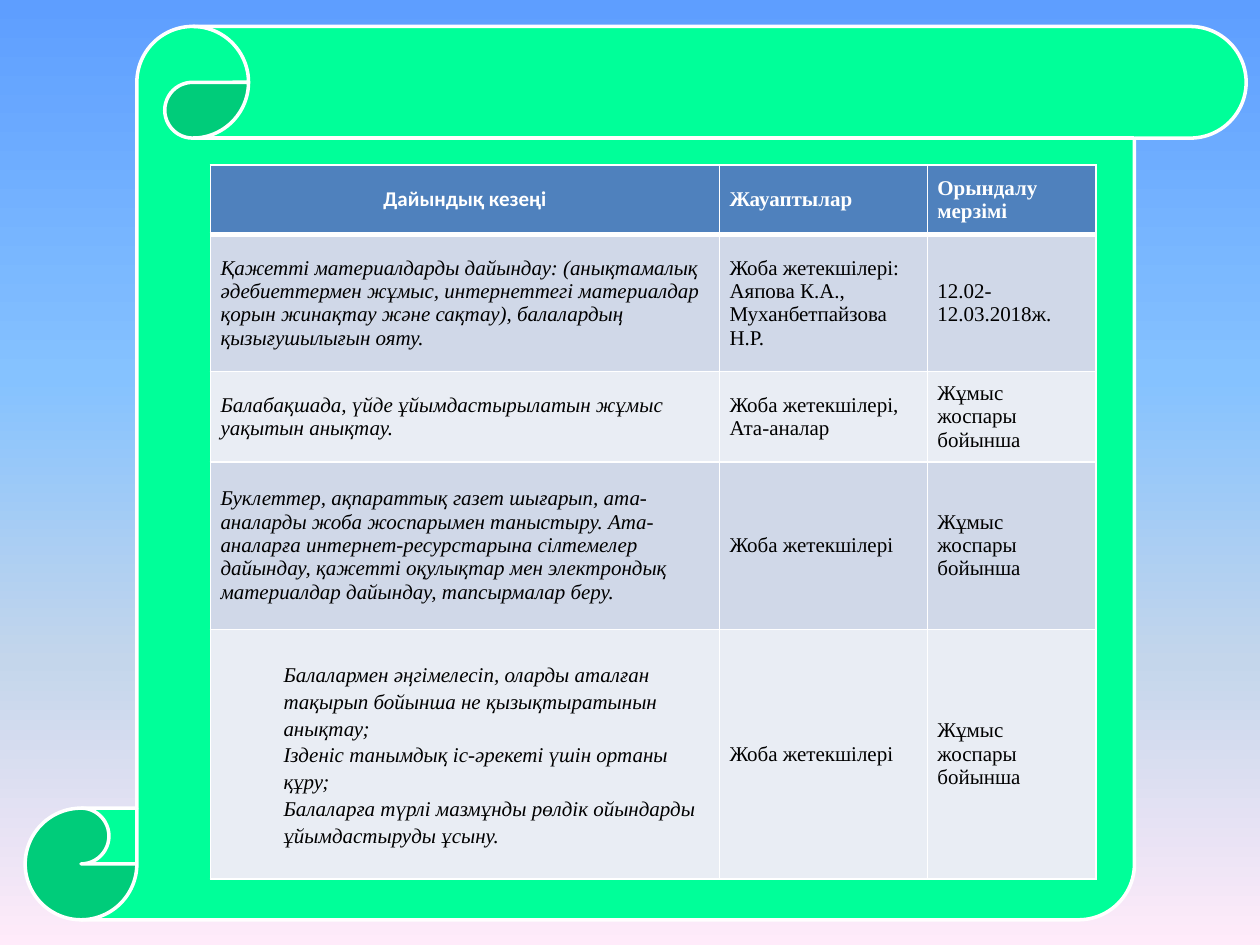
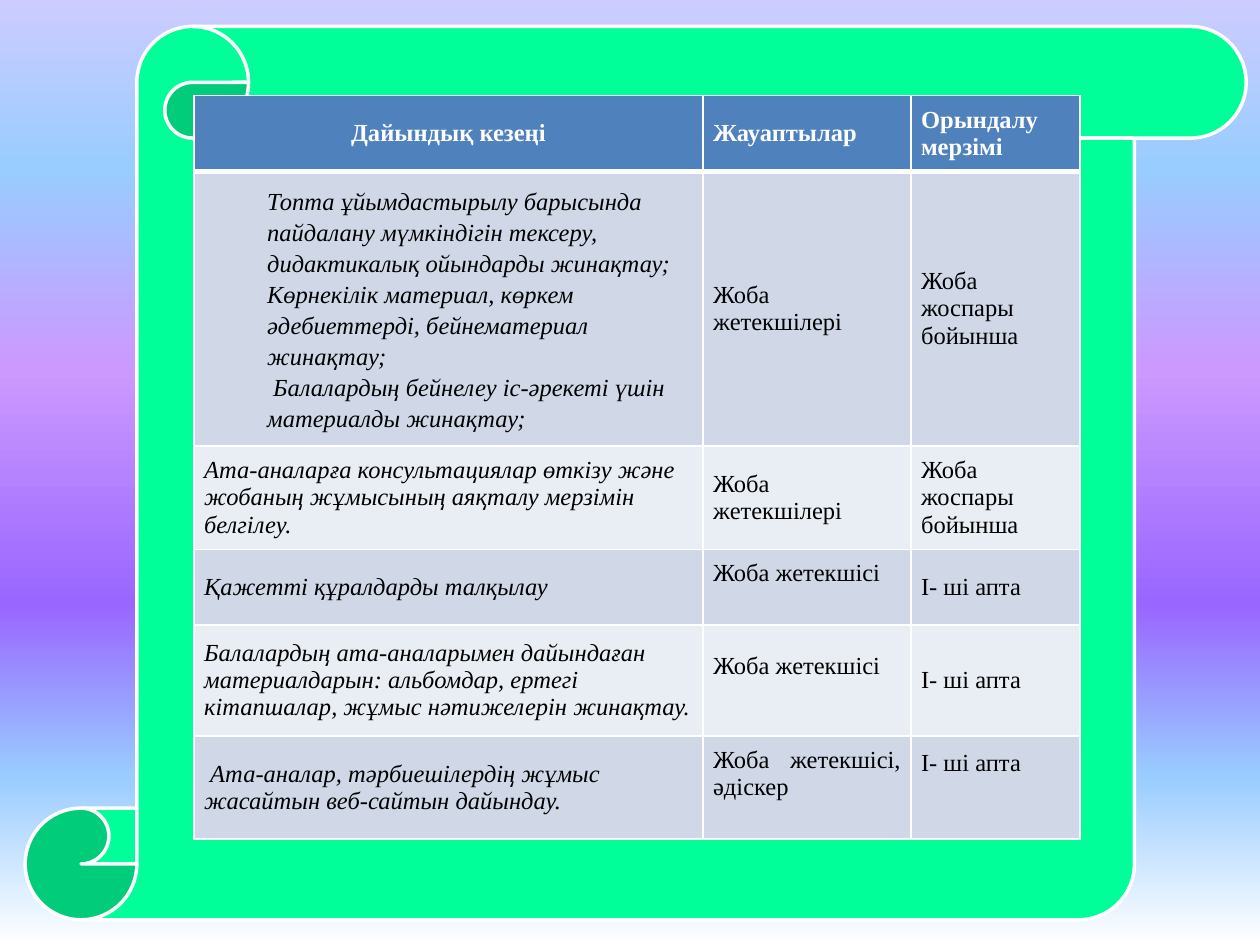
from copy import deepcopy
from lxml import etree
from pptx import Presentation
from pptx.dml.color import RGBColor
from pptx.enum.shapes import MSO_SHAPE
from pptx.enum.text import MSO_ANCHOR, PP_ALIGN
from pptx.oxml.ns import qn
from pptx.util import Inches, Pt

SCROLL = MSO_SHAPE.VERTICAL_SCROLL
MID, TOP = MSO_ANCHOR.MIDDLE, MSO_ANCHOR.TOP
LEFT, CENTER, JUST = PP_ALIGN.LEFT, PP_ALIGN.CENTER, PP_ALIGN.JUSTIFY

WHITE = RGBColor(0xFF, 0xFF, 0xFF)
BLACK = RGBColor(0, 0, 0)
GREEN = RGBColor(0x00, 0xFF, 0x99)
BLUE = RGBColor(0x4F, 0x81, 0xBD)
BANDS = [RGBColor(0xE9, 0xED, 0xF4), RGBColor(0xD0, 0xD8, 0xE8)]
SKY = [(0, RGBColor(0x5E, 0x9E, 0xFF)), (40, RGBColor(0x85, 0xC2, 0xFF)),
       (70, RGBColor(0xC4, 0xD6, 0xEB)), (100, RGBColor(0xFF, 0xEB, 0xFA))]
DUSK = [(0, WHITE), (18, RGBColor(0x99, 0xCC, 0xFF)),
        (36, RGBColor(0x99, 0x66, 0xFF)), (61, RGBColor(0xCC, 0x99, 0xFF)),
        (82, RGBColor(0x99, 0xCC, 0xFF)), (100, RGBColor(0xCC, 0xCC, 0xFF))]

SERIF, SANS = "Times New Roman", "Calibri"
COLS, ROWS = 100, 75
WIDTHS = [40.4, 16.5, 13.4]
HEAD = ["Дайындық кезеңі", "Жауаптылар", "Орындалу мерзімі"]
LEADS, LEAD = "Жоба жетекшілері", "Жоба жетекшісі"
WORK, PLAN = "Жұмыс жоспары бойынша", "Жоба жоспары бойынша"
WEEK = "І- ші апта"

FIRST = [
    HEAD,
    ["Қажетті материалдарды дайындау: (анықтамалық әдебиеттермен жұмыс, "
     "интернеттегі материалдар қорын жинақтау және сақтау), балалардың "
     "қызығушылығын ояту.",
     LEADS + ":\nАяпова К.А., Муханбетпайзова Н.Р.", "12.02-12.03.2018ж."],
    ["Балабақшада, үйде ұйымдастырылатын жұмыс уақытын анықтау.",
     LEADS + ",\nАта-аналар", WORK],
    ["Буклеттер, ақпараттық газет шығарып, ата-аналарды жоба жоспарымен "
     "таныстыру. Ата-аналарға интернет-ресурстарына сілтемелер дайындау, "
     "қажетті оқулықтар мен электрондық материалдар дайындау, "
     "тапсырмалар беру.", LEADS, WORK],
    ["Балалармен әңгімелесіп, оларды аталған тақырып бойынша не "
     "қызықтыратынын анықтау;\n"
     "Ізденіс танымдық іс-әрекеті үшін ортаны құру;\n"
     "Балаларға түрлі мазмұнды рөлдік ойындарды ұйымдастыруды ұсыну.",
     LEADS, WORK],
]
NEXT = [
    HEAD,
    ["Топта ұйымдастырылу барысында пайдалану мүмкіндігін тексеру, "
     "дидактикалық ойындарды жинақтау;\n"
     "Көрнекілік материал, көркем әдебиеттерді, бейнематериал жинақтау;\n"
     " Балалардың бейнелеу іс-әрекеті үшін материалды жинақтау;",
     LEADS, PLAN],
    ["Ата-аналарға консультациялар өткізу және жобаның жұмысының "
     "аяқталу мерзімін белгілеу.", LEADS, PLAN],
    ["Қажетті құралдарды талқылау", LEAD, WEEK],
    ["Балалардың ата-аналарымен дайындаған материалдарын: альбомдар, "
     "ертегі кітапшалар, жұмыс нәтижелерін жинақтау.", LEAD, WEEK],
    [" Ата-аналар, тәрбиешілердің жұмыс жасайтын веб-сайтын дайындау.",
     LEAD + ", әдіскер", WEEK],
]


class Deck:
    def __init__(self):
        self.file = Presentation()
        self.file.slide_width, self.file.slide_height = Inches(10), Inches(7.5)
        self.slide = None

    def x(self, cols):
        return round(self.file.slide_width * cols / COLS)

    def y(self, rows):
        return round(self.file.slide_height * rows / ROWS)

    def page(self, stops, angle):
        self.slide = self.file.slides.add_slide(self.file.slide_layouts[6])
        fill = self.slide.background.fill
        fill.gradient()
        fill.gradient_angle = angle
        group = self.slide.element.find(".//" + qn("a:gsLst"))
        model = deepcopy(group[0])
        for stop in list(group):
            group.remove(stop)
        for place, color in stops:
            stop = deepcopy(model)
            for child in list(stop):
                stop.remove(child)
            stop.set("pos", str(place * 1000))
            etree.SubElement(stop, qn("a:srgbClr"), val=str(color))
            group.append(stop)
        self.scroll()

    def scroll(self):
        shape = self.slide.shapes.add_shape(
            SCROLL, self.x(2), self.y(2.1), self.x(96.9), self.y(70.9))
        shape.shadow.inherit = False
        shape.fill.solid()
        shape.fill.fore_color.rgb = GREEN
        shape.line.color.rgb = WHITE
        shape.line.width = Pt(2)

    def table(self, left, top, highs, data, size, face=SERIF):
        grid = self.slide.shapes.add_table(
            len(data), len(WIDTHS), self.x(left), self.y(top),
            self.x(sum(WIDTHS)), self.y(sum(highs))).table
        for col, width in zip(grid.columns, WIDTHS):
            col.width = self.x(width)
        for row, high in zip(grid.rows, highs):
            row.height = self.y(high)
        for r, row in enumerate(data):
            for c, text in enumerate(row):
                cell = grid.cell(r, c)
                self.frame(cell, r)
                self.text(cell, text, r == 0, c == 0, size,
                          face if r == c == 0 else SERIF)
        return grid

    def frame(self, cell, row):
        cell.margin_left = cell.margin_right = self.x(0.8)
        cell.margin_top = cell.margin_bottom = self.y(0.8)
        cell.vertical_anchor = MID
        props = cell._tc.get_or_add_tcPr()
        thick = {0: "lnB", 1: "lnT"}.get(row)
        for side in ("lnL", "lnR", "lnT", "lnB"):
            wide = Pt(3 if side == thick else 1)
            line = etree.SubElement(props, qn("a:" + side), w=str(int(wide)))
            fill = etree.SubElement(line, qn("a:solidFill"))
            etree.SubElement(fill, qn("a:srgbClr"), val=str(WHITE))
        cell.fill.solid()
        cell.fill.fore_color.rgb = BANDS[row % 2] if row else BLUE

    def text(self, cell, text, head, lead, size, face):
        parts = text.split("\n")
        for i, part in enumerate(parts):
            para = cell.text_frame.paragraphs[0] if i == 0 \
                else cell.text_frame.add_paragraph()
            para.alignment = CENTER if head and lead else LEFT
            if lead and len(parts) > 1:
                para.line_spacing = 1.15
                para._p.get_or_add_pPr().set("marL", str(self.x(5)))
            elif head != lead:
                para.space_before = Pt(2.9)
            run = para.add_run()
            run.text = part
            font = run.font
            font.name, font.size = face, Pt(size)
            font.bold, font.italic = head, lead and not head
            font.color.rgb = WHITE if head else BLACK

    def lift(self, cell):
        cell.text_frame.paragraphs[0].alignment = JUST
        cell.margin_bottom = self.y(3)

    def raise_top(self, cell):
        cell.vertical_anchor = TOP
        para = cell.text_frame.paragraphs[0]
        para.line_spacing, para.space_after = 1.15, Pt(10)


def main():
    deck = Deck()
    deck.page(SKY, 270)
    deck.table(16.7, 13.1, [5.5, 10.9, 6.3, 13.3, 19.8], FIRST, 12, SANS)
    deck.page(DUSK, 90)
    grid = deck.table(15.4, 7.6, [6, 21.8, 8.2, 6, 8.8, 8.2], NEXT, 14)
    for row in (3, 4, 5):
        deck.lift(grid.cell(row, 1))
    deck.raise_top(grid.cell(5, 2))
    deck.file.save("out.pptx")


if __name__ == "__main__":
    main()
